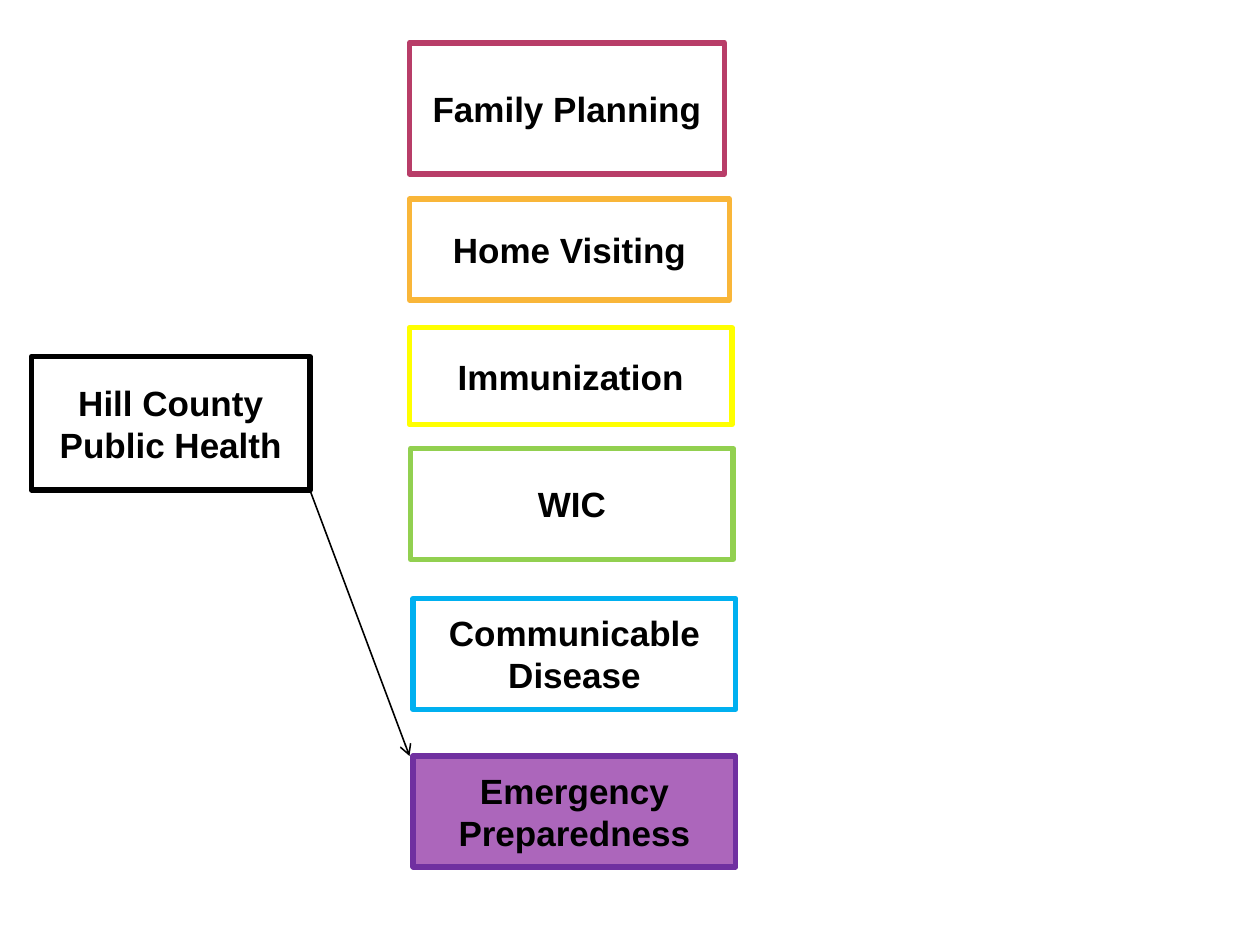
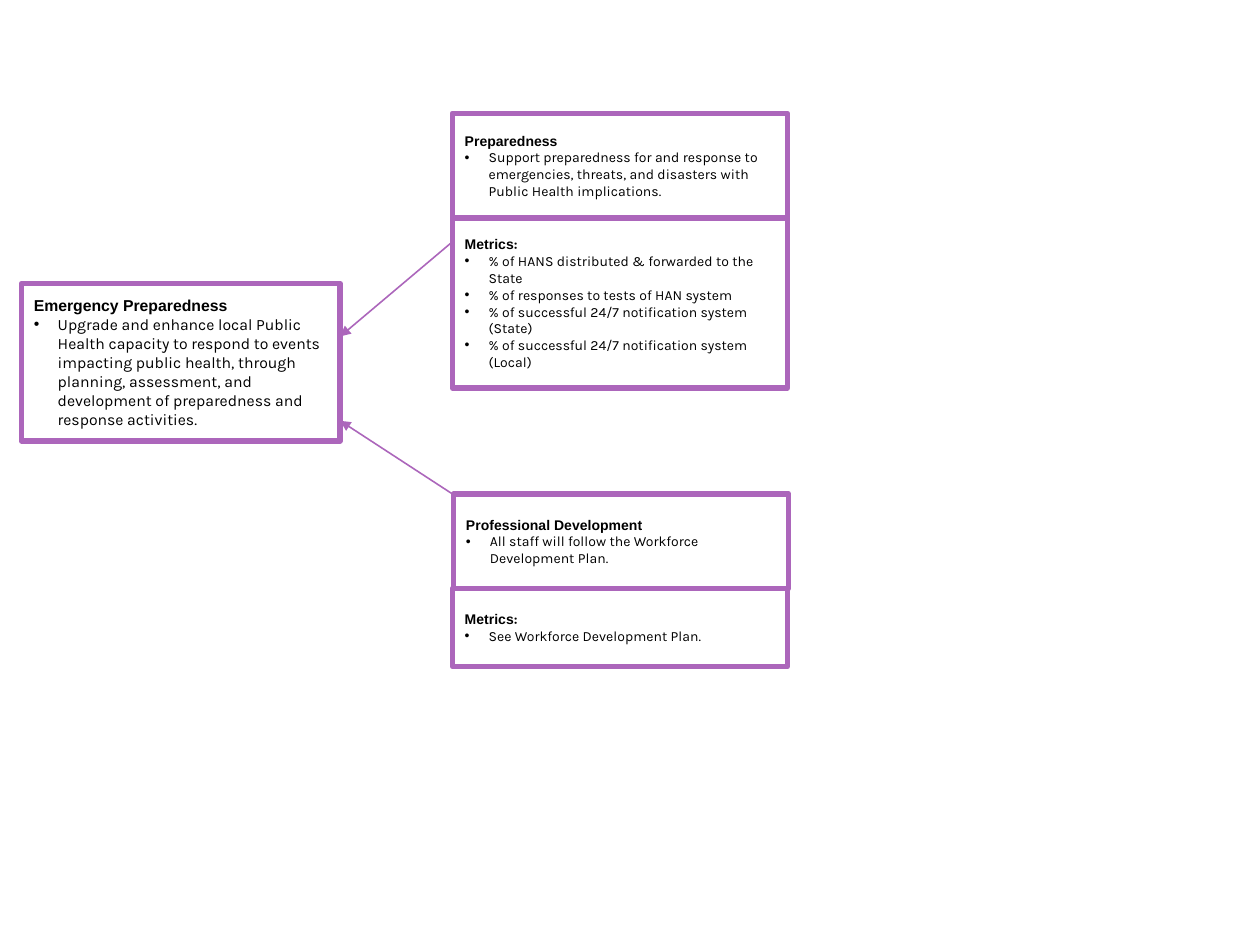
import lxml.etree
import pptx
import pptx.dml.color
import pptx.enum.shapes
import pptx.enum.text
import pptx.oxml.ns
import pptx.util

Inches = pptx.util.Inches
Pt = pptx.util.Pt
RGBColor = pptx.dml.color.RGBColor
qn = pptx.oxml.ns.qn

BLACK = RGBColor(0x00, 0x00, 0x00)
WHITE = RGBColor(0xFF, 0xFF, 0xFF)
ROSE = RGBColor(0xB8, 0x3D, 0x68)
ORANGE = RGBColor(0xF9, 0xB6, 0x39)
YELLOW = RGBColor(0xFF, 0xFF, 0x00)
GREEN = RGBColor(0x92, 0xD0, 0x50)
BLUE = RGBColor(0x00, 0xB0, 0xF0)
PURPLE = RGBColor(0x70, 0x30, 0xA0)
LILAC = RGBColor(0xAC, 0x66, 0xBB)

PROGRAMS = [
    ("Family Planning", 3.25, 0.34, 2.5, 1.04, ROSE, WHITE),
    ("Home Visiting", 3.25, 1.58, 2.54, 0.8, ORANGE, WHITE),
    ("Immunization", 3.25, 2.6, 2.56, 0.77, YELLOW, WHITE),
    ("WIC", 3.26, 3.56, 2.56, 0.88, GREEN, WHITE),
    ("Communicable Disease", 3.28, 4.75, 2.56, 0.88, BLUE, WHITE),
    ("Emergency Preparedness", 3.28, 6, 2.56, 0.88, PURPLE, LILAC),
]

GOALS = [
    ("Preparedness", 3.59, 0.9, 0.83, [
        "Support preparedness for and response to emergencies, threats, "
        "and disasters with Public Health implications.",
    ]),
    ("Metrics:", 3.59, 1.73, 1.35, [
        "% of HANS distributed & forwarded to the State",
        "% of responses to tests of HAN system",
        "% of successful 24/7 notification system (State)",
        "% of successful 24/7 notification system (Local)",
    ]),
    ("Professional Development", 3.6, 3.92, 0.75, [
        "All staff will follow the Workforce Development Plan.",
    ]),
    ("Metrics:", 3.59, 4.67, 0.62, ["See Workforce Development Plan."]),
]


class ProgramMap:
    heading_font = "Arial"
    body_font = "Karla"
    border = Pt(3.15)
    arrow_width = Pt(0.9)
    bullet_indent = Inches(0.19)

    def __init__(self):
        self.deck = pptx.Presentation()
        self.deck.slide_width = Inches(10)
        self.deck.slide_height = Inches(7.5)
        self.slide = None

    def new_slide(self):
        self.slide = self.deck.slides.add_slide(self.deck.slide_layouts[6])

    def style_run(self, run, font, size, bold):
        run.font.name = font
        run.font.size = Pt(size)
        run.font.bold = bold
        run.font.color.rgb = BLACK

    def box(self, left, top, width, height, outline, fill=WHITE):
        panel = self.slide.shapes.add_shape(
            pptx.enum.shapes.MSO_SHAPE.RECTANGLE,
            Inches(left), Inches(top), Inches(width), Inches(height))
        panel.shadow.inherit = False
        panel.fill.solid()
        panel.fill.fore_color.rgb = fill
        panel.line.color.rgb = outline
        panel.line.width = self.border
        lxml.etree.SubElement(panel.line._get_or_add_ln(), qn("a:round"))
        panel.text_frame.word_wrap = True
        panel.text_frame.vertical_anchor = pptx.enum.text.MSO_ANCHOR.MIDDLE
        return panel.text_frame

    def label_box(self, label, left, top, width, height, outline, fill=WHITE):
        frame = self.box(left, top, width, height, outline, fill)
        frame.text = label
        paragraph = frame.paragraphs[0]
        paragraph.alignment = pptx.enum.text.PP_ALIGN.CENTER
        self.style_run(paragraph.runs[0], self.heading_font, 20, True)

    def goal_box(self, heading, left, top, width, height, points, size):
        frame = self.box(left, top, width, height, LILAC)
        words, colon, _ = heading.partition(":")
        frame.text = words
        title = frame.paragraphs[0]
        title.alignment = pptx.enum.text.PP_ALIGN.LEFT
        self.style_run(title.runs[0], self.heading_font, size, True)
        if colon:
            mark = title.add_run()
            mark.text = colon
            self.style_run(mark, self.body_font, size, True)
        for point in points:
            self.bullet(frame.add_paragraph(), point, size)

    def bullet(self, paragraph, point, size):
        paragraph.text = point
        paragraph.alignment = pptx.enum.text.PP_ALIGN.LEFT
        properties = paragraph._p.get_or_add_pPr()
        properties.set("marL", str(self.bullet_indent))
        properties.set("indent", str(-self.bullet_indent))
        lxml.etree.SubElement(
            properties, qn("a:buFont"), typeface=self.heading_font)
        lxml.etree.SubElement(properties, qn("a:buChar"), char="•")
        self.style_run(paragraph.runs[0], self.body_font, size, False)

    def arrow(self, start, end, color, head):
        link = self.slide.shapes.add_connector(
            pptx.enum.shapes.MSO_CONNECTOR.STRAIGHT,
            *(Inches(value) for value in start + end))
        link.line.color.rgb = color
        link.line.width = self.arrow_width
        lxml.etree.SubElement(
            link.line._get_or_add_ln(), qn("a:tailEnd"), type=head)
        lxml.etree.SubElement(link._element.spPr, qn("a:effectLst"))


def main():
    program_map = ProgramMap()

    program_map.new_slide()
    program_map.label_box(
        "Hill County Public Health", 0.25, 2.83, 2.21, 1.06, BLACK)
    for program in PROGRAMS:
        program_map.label_box(*program)
    program_map.arrow((2.46, 3.89), (3.25, 6), BLACK, "arrow")

    program_map.new_slide()
    program_map.goal_box("Emergency Preparedness", 0.17, 2.25, 2.53, 1.25, [
        "Upgrade and enhance local Public Health capacity to respond to "
        "events impacting public health, through planning, assessment, and "
        "development of preparedness and response activities.",
    ], 9)
    for heading, left, top, height, points in GOALS:
        program_map.goal_box(heading, left, top, 2.66, height, points, 8)
    for goal_top, target_top in ((1.92, 2.67), (3.92, 3.34)):
        program_map.arrow((3.59, goal_top), (2.7, target_top), LILAC, "triangle")

    program_map.deck.save("out.pptx")


if __name__ == "__main__":
    main()
